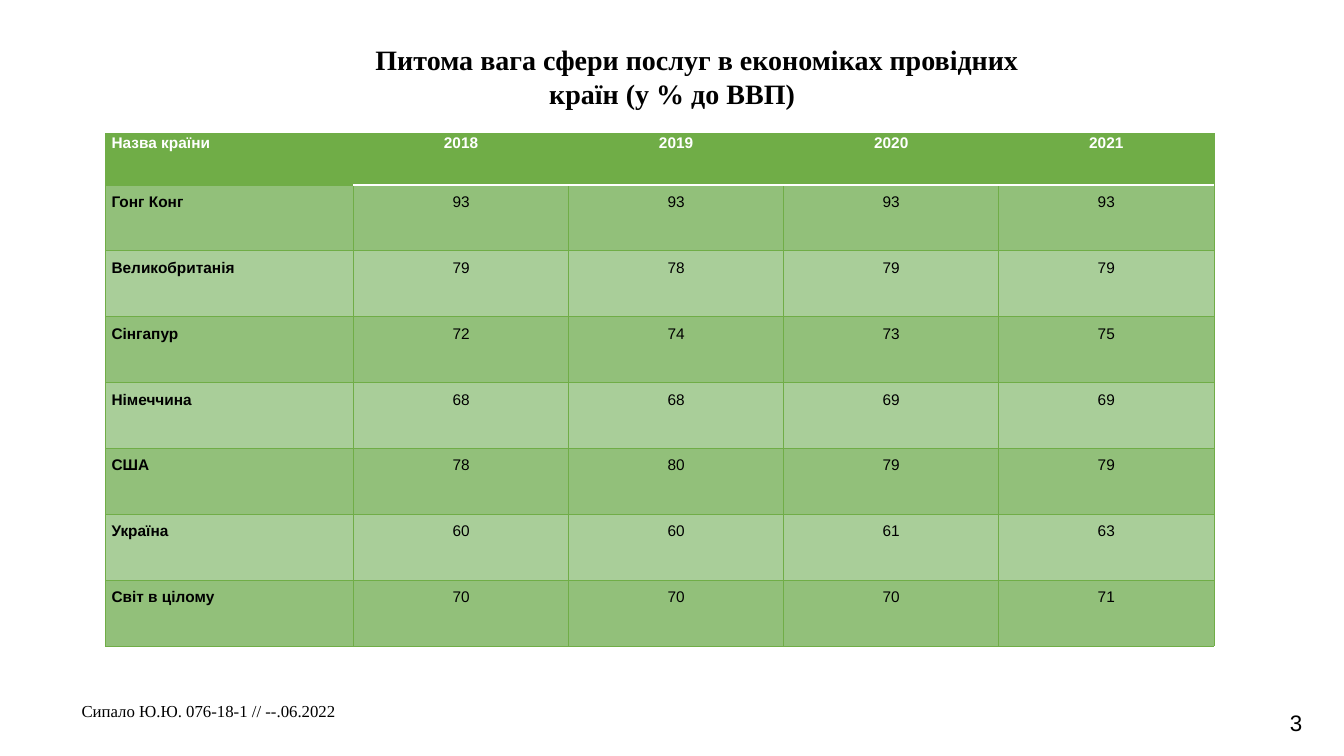
from dataclasses import dataclass
from typing import Any

import pptx
import pptx.dml.color
import pptx.enum.text
import pptx.oxml
import pptx.oxml.ns
import pptx.util
from pptx.dml.color import RGBColor
from pptx.util import Cm

ALIGN = pptx.enum.text.PP_ALIGN
ANCHOR = pptx.enum.text.MSO_ANCHOR
BLACK = RGBColor(0x00, 0x00, 0x00)
WHITE = RGBColor(0xFF, 0xFF, 0xFF)
GREEN = RGBColor(0x70, 0xAD, 0x47)
DARK = RGBColor(0x92, 0xC0, 0x7A)
LIGHT = RGBColor(0xA9, 0xCE, 0x99)
SERIF = "Times New Roman"
SANS = "Arial"


@dataclass
class Style:
    size: float
    face: str
    align: Any = ALIGN.CENTER
    bold: bool = False
    color: RGBColor = BLACK
    lines: float = 1.0
    after: float = 0


@dataclass
class Label:
    text: str
    box: tuple[float, float, float, float]
    style: Style
    anchor: Any = ANCHOR.TOP
    indent: float = 0


@dataclass
class Land:
    name: str
    shares: tuple[int, ...]


YEARS = (2018, 2019, 2020, 2021)
LANDS = [
    Land("Гонг Конг", (93, 93, 93, 93)),
    Land("Великобританія", (79, 78, 79, 79)),
    Land("Сінгапур", (72, 74, 73, 75)),
    Land("Німеччина", (68, 68, 69, 69)),
    Land("США", (78, 80, 79, 79)),
    Land("Україна", (60, 60, 61, 63)),
    Land("Світ в цілому", (70, 70, 70, 71)),
]
TITLE = Label("Питома вага сфери послуг в економіках провідних країн (у % до ВВП)",
              (7.87, 0.94, 18.14, 1.96), Style(20, SERIF, bold=True),
              ANCHOR.MIDDLE, 1.25)
FOOTER = Label("Сипало Ю.Ю. 076-18-1 // --.06.2022", (1.8, 17.58, 27.66, 0.66),
               Style(12, SERIF, ALIGN.LEFT, lines=0.9))
NUMBER = Label("3", (31.85, 17.75, 1.63, 0.94), Style(16, SANS))


def write(frame: Any, text: str, style: Style) -> None:
    frame.text = text
    para = frame.paragraphs[0]
    para.alignment = style.align
    para.line_spacing = style.lines
    para.space_before = pptx.util.Pt(0)
    para.space_after = pptx.util.Pt(style.after)
    font = para.runs[0].font
    font.size = pptx.util.Pt(style.size)
    font.name = style.face
    font.bold = style.bold
    font.color.rgb = style.color


def place(shape: Any, label: Label) -> None:
    shape.left, shape.top, shape.width, shape.height = map(Cm, label.box)
    frame = shape.text_frame
    frame.word_wrap = True
    frame.auto_size = pptx.enum.text.MSO_AUTO_SIZE.NONE
    frame.vertical_anchor = label.anchor
    write(frame, label.text, label.style)
    props = frame.paragraphs[0]._p.get_or_add_pPr()
    props.set("marL", "0")
    props.set("indent", str(Cm(label.indent)))
    props.append(pptx.oxml.parse_xml(
        f'<a:buNone {pptx.oxml.ns.nsdecls("a")}/>'))


def edge(cell: Any, side: str, color: RGBColor, width: float) -> None:
    cell._tc.get_or_add_tcPr().append(pptx.oxml.parse_xml(
        f'<a:{side} {pptx.oxml.ns.nsdecls("a")} w="{pptx.util.Pt(width)}">'
        f'<a:solidFill><a:srgbClr val="{color}"/></a:solidFill></a:{side}>'))


def draw_cell(cell: Any, text: str, row: int, col: int) -> None:
    head = row == 0
    cell.margin_left = cell.margin_right = Cm(0.15)
    cell.margin_top = cell.margin_bottom = 0
    write(cell.text_frame, text, Style(
        11, SANS, ALIGN.CENTER if col else ALIGN.JUSTIFY, head or col == 0,
        WHITE if head else BLACK, 1.07 if head else 1.5, 8))
    # White rule between the years and their shares
    for side in ("lnL", "lnR", "lnT", "lnB"):
        rule = col > 0 and (row, side) in ((0, "lnB"), (1, "lnT"))
        edge(cell, side, WHITE if rule else GREEN, 1 if rule else 0.5)
    cell.fill.solid()
    cell.fill.fore_color.rgb = GREEN if head else DARK if row % 2 else LIGHT


def draw_table(slide: Any) -> None:
    rows = [("Назва країни", *YEARS)] + [(land.name, *land.shares) for land in LANDS]
    table = slide.shapes.add_table(len(rows), len(rows[0]), Cm(2.66), Cm(3.37),
                                   Cm(27.93), Cm(12.91)).table
    table.horz_banding = False
    for col, column in enumerate(table.columns):
        column.width = Cm(5.42 if col else 6.25)
    for row, values in enumerate(rows):
        table.rows[row].height = Cm(1.66 if row else 1.29)
        for col, value in enumerate(values):
            draw_cell(table.cell(row, col), str(value), row, col)


def main() -> None:
    deck = pptx.Presentation()
    deck.slide_width, deck.slide_height = Cm(33.87), Cm(19.05)
    slide = deck.slides.add_slide(deck.slide_layouts[1])

    # Title and footer
    place(slide.shapes.title, TITLE)
    place(slide.placeholders[1], FOOTER)

    # Shares by country and year
    draw_table(slide)

    # Slide number
    place(slide.shapes.add_textbox(0, 0, 0, 0), NUMBER)
    deck.save("out.pptx")


if __name__ == "__main__":
    main()
